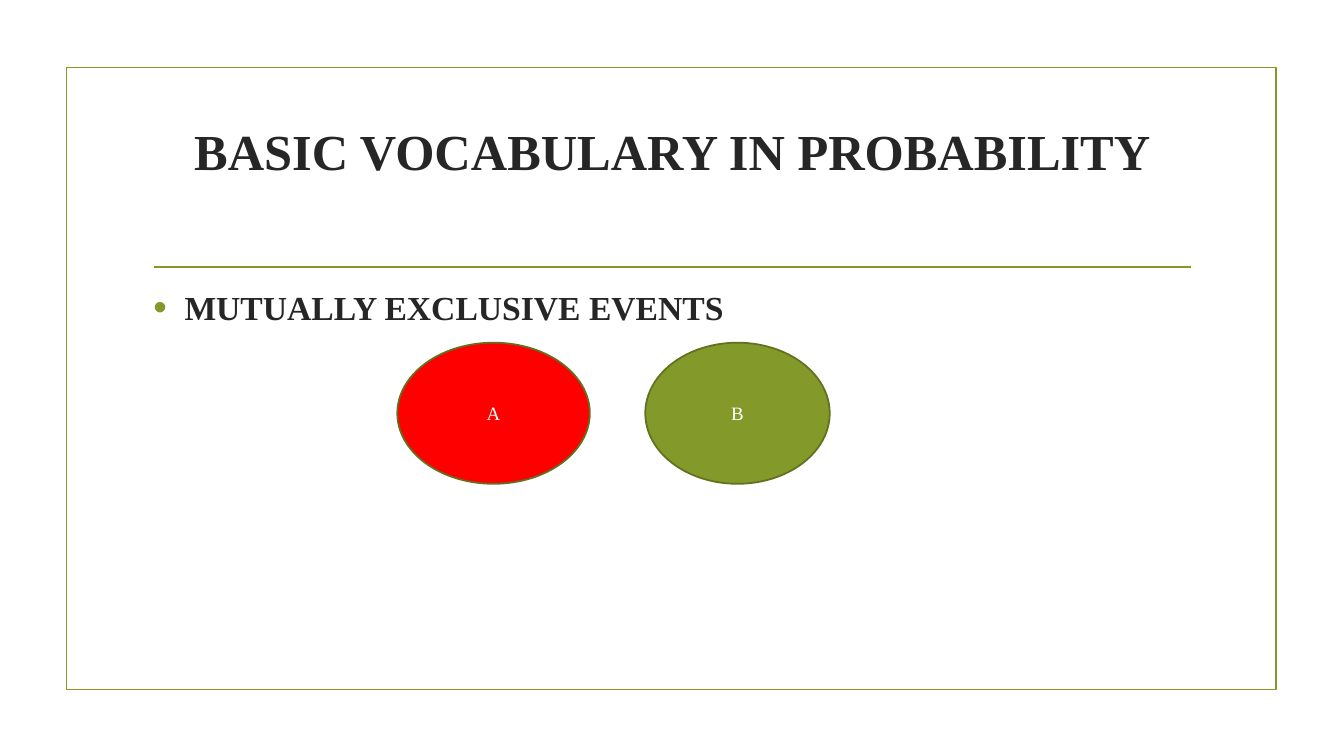
from dataclasses import dataclass

from lxml import etree
from pptx import Presentation
from pptx.dml.color import RGBColor
from pptx.enum.shapes import MSO_CONNECTOR, MSO_SHAPE
from pptx.enum.text import MSO_ANCHOR, MSO_AUTO_SIZE, PP_ALIGN
from pptx.oxml.ns import qn
from pptx.util import Inches, Pt

RECTANGLE, OVAL = MSO_SHAPE.RECTANGLE, MSO_SHAPE.OVAL
STRAIGHT = MSO_CONNECTOR.STRAIGHT
TOP, MIDDLE = MSO_ANCHOR.TOP, MSO_ANCHOR.MIDDLE
LEFT, CENTER = PP_ALIGN.LEFT, PP_ALIGN.CENTER
NO_FIT = MSO_AUTO_SIZE.NONE

OLIVE = RGBColor(0x83, 0x99, 0x2A)
DARK_OLIVE = RGBColor(0x61, 0x71, 0x1F)
RED = RGBColor(0xFF, 0x00, 0x00)
WHITE = RGBColor(0xFF, 0xFF, 0xFF)
INK = RGBColor(0x26, 0x26, 0x26)

FONT = "Times New Roman"
LINE_WIDTH = Pt(1.25)
PAGE_WIDTH, PAGE_HEIGHT = 13.33, 7.5
FRAME_LEFT, FRAME_TOP, FRAME_WIDTH, FRAME_HEIGHT = 0.66, 0.67, 12, 6.17
TEXT_LEFT, TEXT_WIDTH = 1.42, 10.5
RULE_LEFT, RULE_RIGHT, RULE_TOP = 1.53, 11.81, 2.65
EVENT_TOP, EVENT_HEIGHT = 3.4, 1.4


@dataclass(frozen=True)
class Event:
    label: str
    left: float
    width: float
    color: RGBColor


EVENTS = [Event("A", 3.94, 1.91, RED), Event("B", 6.4, 1.83, OLIVE)]


def write(shape, text: str, size: float, color: RGBColor, bold: bool, align, anchor):
    frame = shape.text_frame
    frame.text = text
    frame.word_wrap = True
    frame.auto_size = NO_FIT
    frame.vertical_anchor = anchor
    para = frame.paragraphs[0]
    para.alignment = align
    para.space_before = Pt(0)
    font = para.runs[0].font
    font.name, font.size, font.bold = FONT, Pt(size), bold
    font.color.rgb = color
    return para


def place(shape, top: float, height: float) -> None:
    shape.left, shape.top = Inches(TEXT_LEFT), Inches(top)
    shape.width, shape.height = Inches(TEXT_WIDTH), Inches(height)


def add_bullet(para, color: RGBColor) -> None:
    properties = para._p.get_or_add_pPr()
    properties.set("marL", str(Inches(0.31)))
    properties.set("indent", str(-Inches(0.31)))
    bullet_color = etree.SubElement(properties, qn("a:buClr"))
    etree.SubElement(bullet_color, qn("a:srgbClr"), val=str(color))
    etree.SubElement(properties, qn("a:buSzPct"), val="115000")
    etree.SubElement(properties, qn("a:buFont"), typeface="Arial")
    etree.SubElement(properties, qn("a:buChar"), char="•")


def add_outlined(page, kind, left: float, top: float, width: float, height: float,
                 line_color: RGBColor):
    shape = page.shapes.add_shape(kind, Inches(left), Inches(top), Inches(width), Inches(height))
    shape.shadow.inherit = False
    shape.line.color.rgb = line_color
    shape.line.width = LINE_WIDTH
    return shape


def add_rule(page) -> None:
    rule = page.shapes.add_connector(STRAIGHT, Inches(RULE_LEFT), Inches(RULE_TOP),
                                     Inches(RULE_RIGHT), Inches(RULE_TOP))
    rule.line.color.rgb = OLIVE
    rule.line.width = LINE_WIDTH
    etree.SubElement(rule._element.spPr, qn("a:effectLst"))


def add_event(page, event: Event) -> None:
    oval = add_outlined(page, OVAL, event.left, EVENT_TOP, event.width, EVENT_HEIGHT, DARK_OLIVE)
    oval.fill.solid()
    oval.fill.fore_color.rgb = event.color
    write(oval, event.label, 13.5, WHITE, False, CENTER, MIDDLE)


def main() -> None:
    deck = Presentation()
    deck.slide_width, deck.slide_height = Inches(PAGE_WIDTH), Inches(PAGE_HEIGHT)
    page = deck.slides.add_slide(deck.slide_layouts[1])

    title, body = page.placeholders
    place(title, 1.07, 1.43)
    write(title, "BASIC VOCABULARY IN PROBABILITY", 36, INK, True, CENTER, MIDDLE)
    title.text_frame.margin_bottom = Inches(0.64)

    place(body, 2.8, 3.63)
    para = write(body, "MUTUALLY EXCLUSIVE EVENTS", 24, INK, True, LEFT, TOP)
    para.space_after = Pt(6)
    add_bullet(para, OLIVE)

    frame = add_outlined(page, RECTANGLE, FRAME_LEFT, FRAME_TOP, FRAME_WIDTH, FRAME_HEIGHT, OLIVE)
    frame.fill.background()
    add_rule(page)
    for event in EVENTS:
        add_event(page, event)

    deck.save("out.pptx")


if __name__ == "__main__":
    main()
